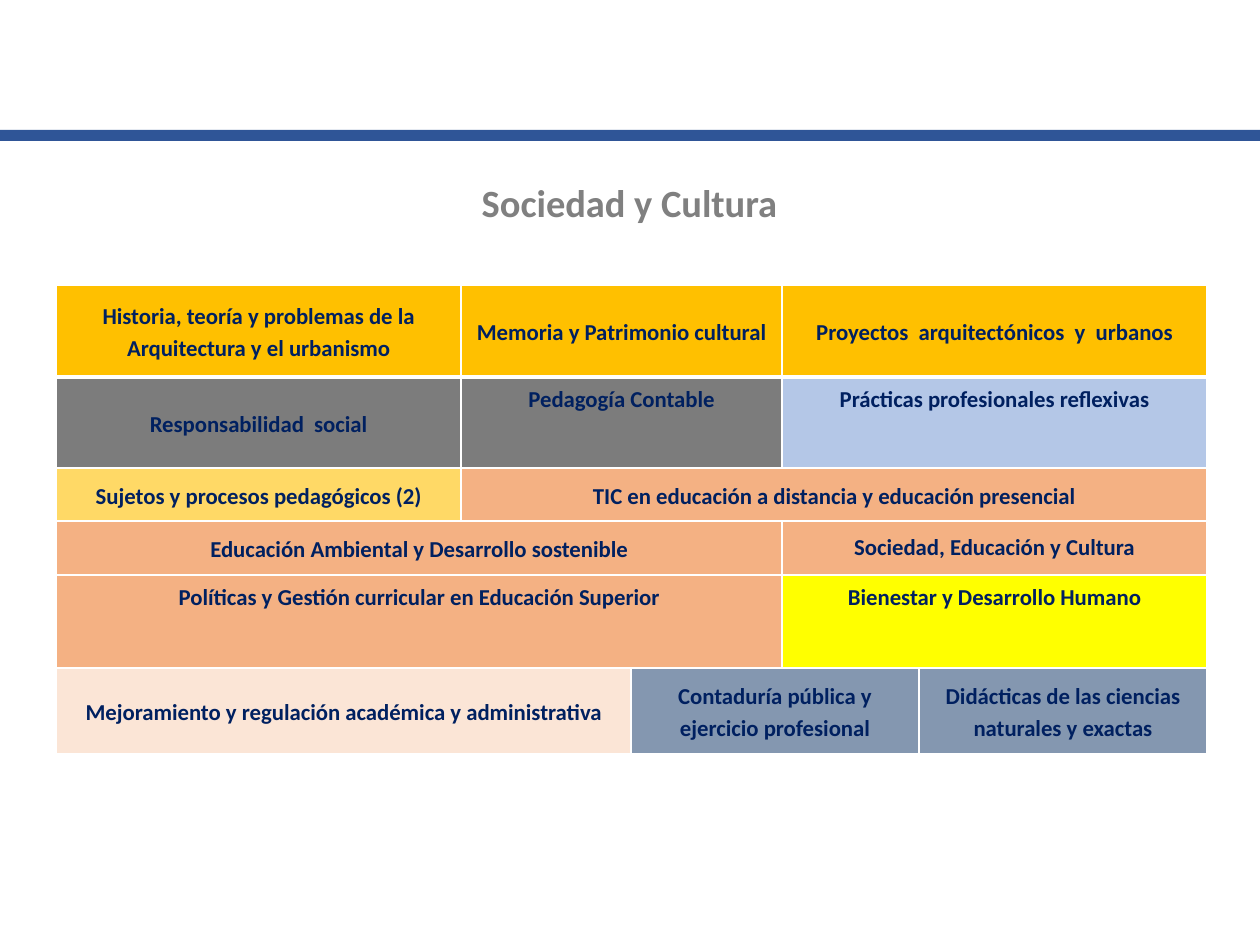
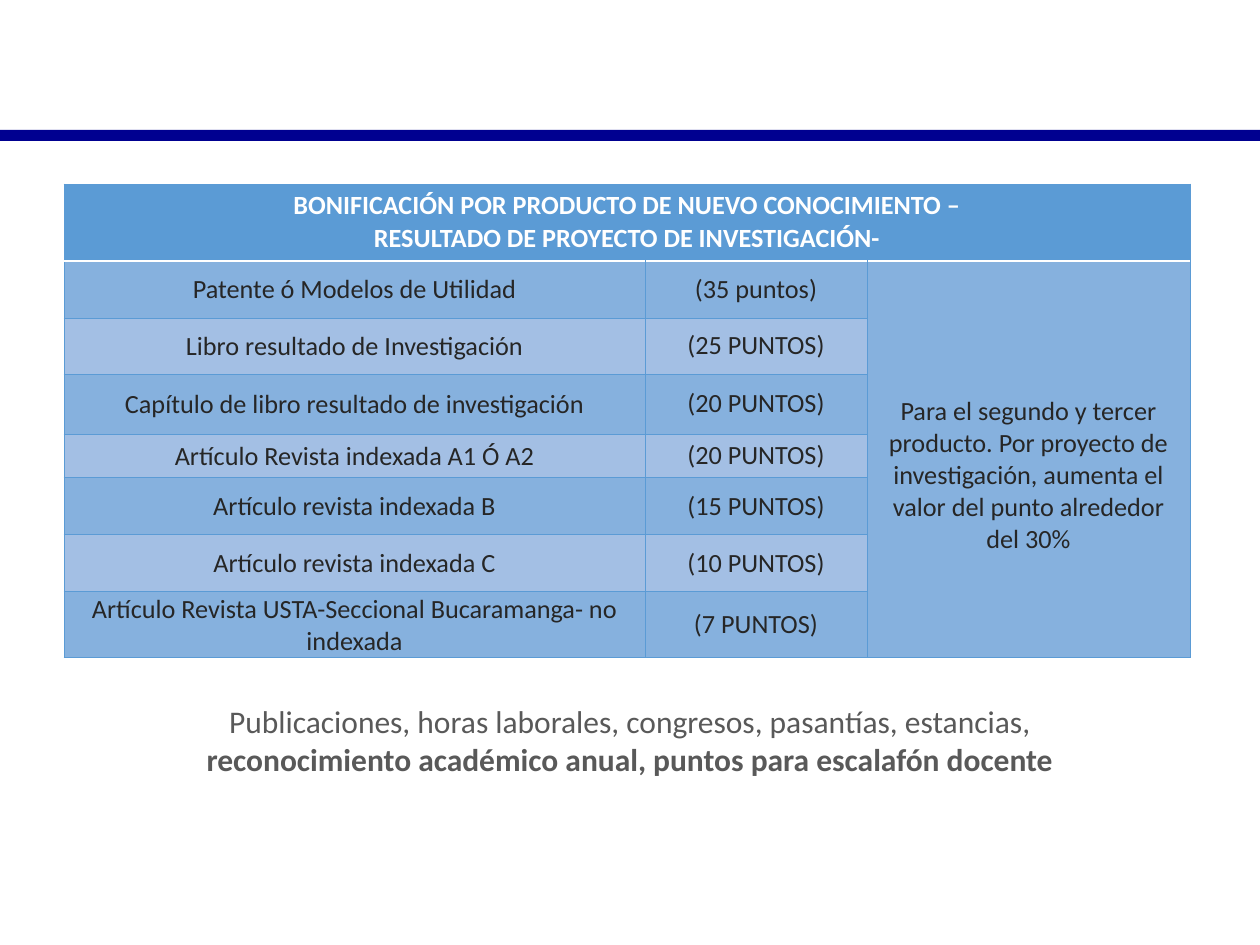
from dataclasses import dataclass

import pptx
import pptx.dml.color
import pptx.enum.shapes
import pptx.enum.text
import pptx.oxml
import pptx.oxml.ns
import pptx.util

ANCHOR = pptx.enum.text.MSO_ANCHOR


@dataclass(frozen=True)
class Theme:
    font: str = "Calibri"
    white: str = "FFFFFF"
    sector_band: str = "2F5597"
    bonus_band: str = "000090"
    title: str = "808080"
    caption: str = "595959"
    navy: str = "002060"
    ink: str = "262626"
    gold: str = "FFC000"
    pale_gold: str = "FFD966"
    gray: str = "7C7C7C"
    sky: str = "B4C7E7"
    orange: str = "F4B183"
    peach: str = "FBE5D6"
    yellow: str = "FFFF00"
    slate: str = "8497B0"
    blue: str = "5B9BD5"
    band_dark: str = "86B1DE"
    band_light: str = "A3BFE4"
    title_size: int = 22
    caption_size: int = 18
    bonus_size: int = 15
    sector_size: int = 13


THEME = Theme()


@dataclass
class Entry:
    text: str
    fill: str
    columns: int = 1
    rows: int = 1
    anchor: ANCHOR = ANCHOR.MIDDLE
    spacing: float = 1.0
    color: str = THEME.ink
    bold: bool = False
    size: int = THEME.bonus_size
    insets: tuple = (11, 6, 11, 6)


def px(length):
    return pptx.util.Emu(round(length * 914400 / 126))


def rgb(color):
    return pptx.dml.color.RGBColor.from_string(color)


def style_paragraph(paragraph, size, color, bold=False):
    paragraph.alignment = pptx.enum.text.PP_ALIGN.CENTER
    paragraph.font.name = THEME.font
    paragraph.font.size = pptx.util.Pt(size)
    paragraph.font.color.rgb = rgb(color)
    paragraph.font.bold = bold


def add_band(slide, box, color):
    band = slide.shapes.add_shape(
        pptx.enum.shapes.MSO_SHAPE.RECTANGLE, *map(px, box))
    band.shadow.inherit = False
    band.fill.solid()
    band.fill.fore_color.rgb = rgb(color)
    band.line.fill.background()


def add_centered_text(slide, box, runs, size, color):
    frame = slide.shapes.add_textbox(*map(px, box)).text_frame
    frame.word_wrap = True
    paragraph = frame.paragraphs[0]
    style_paragraph(paragraph, size, color)
    for text, bold in runs:
        run = paragraph.add_run()
        run.text = text
        run.font.bold = bold


def set_borders(cell, sides):
    properties = cell._tc.get_or_add_tcPr()
    for side, (color, width) in sides.items():
        properties.append(pptx.oxml.parse_xml(
            f'<a:ln{side} {pptx.oxml.ns.nsdecls("a")} w="{pptx.util.Pt(width)}">'
            f'<a:solidFill><a:srgbClr val="{color}"/></a:solidFill></a:ln{side}>'))


def fill_cell(cell, entry, sides):
    set_borders(cell, sides)
    cell.fill.solid()
    cell.fill.fore_color.rgb = rgb(entry.fill)
    cell.vertical_anchor = entry.anchor
    (cell.margin_left, cell.margin_top,
     cell.margin_right, cell.margin_bottom) = map(px, entry.insets)
    cell.text = entry.text
    for paragraph in cell.text_frame.paragraphs:
        if entry.spacing != 1:
            paragraph.line_spacing = entry.spacing
            paragraph.space_after = pptx.util.Pt(10)
        style_paragraph(paragraph, entry.size, entry.color, entry.bold)


def add_grid(slide, left, top, widths, heights, rows, line, header_line):
    box = (left, top, sum(widths), sum(heights))
    table = slide.shapes.add_table(
        len(heights), len(widths), *map(px, box)).table
    table.first_row = table.horz_banding = False
    for column, width in zip(table.columns, widths):
        column.width = px(width)
    for row, height in zip(table.rows, heights):
        row.height = px(height)
    for row_index, entries in enumerate(rows):
        sides = dict.fromkeys("LRTB", line)
        if row_index == 0:
            sides["B"] = header_line
        elif row_index == 1:
            sides["T"] = header_line
        column_index = 0
        for entry in entries:
            cell = table.cell(row_index, column_index)
            column_index += entry.columns
            if entry.columns > 1 or entry.rows > 1:
                cell.merge(table.cell(row_index + entry.rows - 1,
                                      column_index - 1))
            fill_cell(cell, entry, sides)


def sector(text, fill, columns=1, anchor=ANCHOR.MIDDLE, spacing=1.15):
    return Entry(text, fill, columns, anchor=anchor, spacing=spacing,
                 color=THEME.navy, bold=True, size=THEME.sector_size,
                 insets=(10, 5, 10, 5))


def add_sectors(slide, left, top):
    rows = [
        [sector("Historia, teoría y problemas de la Arquitectura y el urbanismo",
                THEME.gold),
         sector("Memoria y Patrimonio cultural", THEME.gold, 2),
         sector("Proyectos  arquitectónicos  y  urbanos", THEME.gold, 2)],
        [sector("Responsabilidad  social", THEME.gray),
         sector("Pedagogía Contable", THEME.gray, 2, ANCHOR.TOP),
         sector("Prácticas profesionales reflexivas", THEME.sky, 2, ANCHOR.TOP)],
        [sector("Sujetos y procesos pedagógicos (2)", THEME.pale_gold),
         sector("TIC en educación a distancia y educación presencial",
                THEME.orange, 4)],
        [sector("Educación Ambiental y Desarrollo sostenible", THEME.orange, 3),
         sector("Sociedad, Educación y Cultura", THEME.orange, 2, spacing=1.0)],
        [sector("Políticas y Gestión curricular en Educación Superior",
                THEME.orange, 3, ANCHOR.TOP),
         sector("Bienestar y Desarrollo Humano", THEME.yellow, 2, ANCHOR.TOP)],
        [sector("Mejoramiento y regulación académica y administrativa",
                THEME.peach, 2),
         sector("Contaduría pública y ejercicio profesional", THEME.slate, 2),
         sector("Didácticas de las ciencias naturales y exactas", THEME.slate)],
    ]
    add_grid(slide, left, top, [405, 170, 151, 137, 288],
             [92, 91, 53, 54, 93, 86], rows,
             (THEME.white, 1), (THEME.white, 3))


def add_bonuses(slide, left, top):
    products = [
        ("Patente ó Modelos de Utilidad", "(35 puntos)"),
        ("Libro resultado de Investigación", "(25 PUNTOS)"),
        ("Capítulo de libro resultado de investigación", "(20 PUNTOS)"),
        ("Artículo Revista indexada A1 Ó A2", "(20 PUNTOS)"),
        ("Artículo revista indexada B", "(15 PUNTOS)"),
        ("Artículo revista indexada C", "(10 PUNTOS)"),
        ("Artículo Revista USTA-Seccional Bucaramanga- no indexada",
         "(7 PUNTOS)"),
    ]
    rows = [[Entry("BONIFICACIÓN POR PRODUCTO DE NUEVO CONOCIMIENTO –\n"
                   "RESULTADO DE PROYECTO DE INVESTIGACIÓN-",
                   THEME.blue, 3, anchor=ANCHOR.TOP, color=THEME.white,
                   bold=True)]]
    for index, (product, points) in enumerate(products):
        fill = THEME.band_light if index % 2 else THEME.band_dark
        rows.append([Entry(product, fill, insets=(1, 1, 1, 0)),
                     Entry(points, fill)])
    rows[1].append(Entry(
        "Para el segundo y tercer producto. Por proyecto de investigación, "
        "aumenta el valor del punto alrededor del 30%",
        THEME.band_dark, rows=len(products), insets=(11, 38, 11, 6)))
    add_grid(slide, left, top, [581, 222, 323],
             [77, 57, 56, 60, 44, 57, 57, 66], rows,
             (THEME.blue, 0.5), (THEME.white, 1))


def add_page(deck, band_color):
    slide = deck.slides.add_slide(deck.slide_layouts[6])
    add_band(slide, (0, 130, 1260, 11), band_color)
    return slide


def build_sector_slide(deck):
    slide = add_page(deck, THEME.sector_band)
    add_sectors(slide, 56, 285)
    add_centered_text(slide, (92, 173, 1075, 59),
                      [("Sociedad y Cultura", True)],
                      THEME.title_size, THEME.title)


def build_bonus_slide(deck):
    slide = add_page(deck, THEME.bonus_band)
    add_bonuses(slide, 64, 184)
    add_centered_text(
        slide, (120, 696, 1020, 89),
        [("Publicaciones, horas laborales, congresos, pasantías, estancias, ",
          False),
         ("reconocimiento académico anual, puntos para escalafón docente",
          True)],
        THEME.caption_size, THEME.caption)


def main():
    deck = pptx.Presentation()
    deck.slide_width, deck.slide_height = px(1260), px(945)
    build_sector_slide(deck)
    build_bonus_slide(deck)
    deck.save("out.pptx")


if __name__ == "__main__":
    main()
